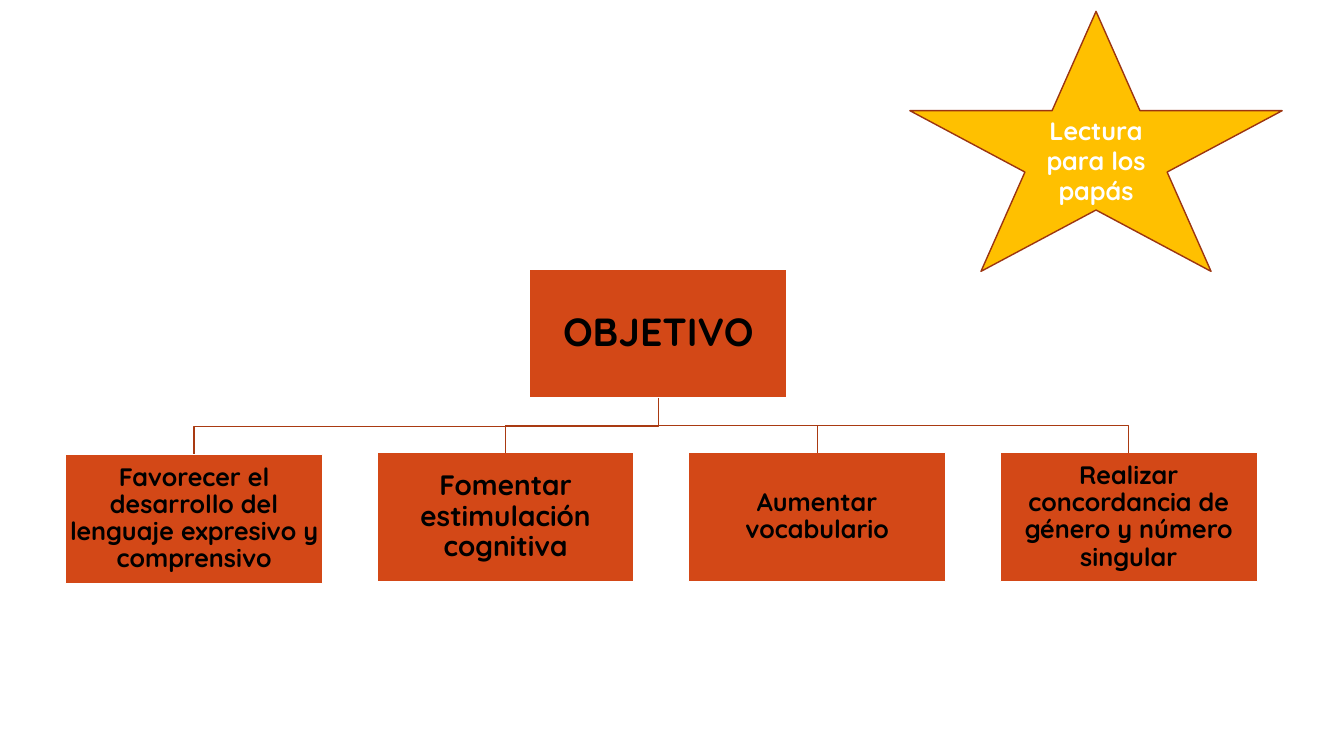
from dataclasses import dataclass

from pptx import Presentation
from pptx.dml.color import RGBColor
from pptx.enum.shapes import MSO_SHAPE
from pptx.enum.text import MSO_ANCHOR, MSO_AUTO_SIZE, PP_ALIGN
from pptx.util import Inches, Pt

STAR = MSO_SHAPE.STAR_5_POINT
RECTANGLE = MSO_SHAPE.RECTANGLE
MIDDLE = MSO_ANCHOR.MIDDLE
CENTER = PP_ALIGN.CENTER
NO_AUTOFIT = MSO_AUTO_SIZE.NONE
TITLE_ONLY = 5


@dataclass(frozen=True)
class Theme:
    font: str = "Quicksand"
    box: str = "D34817"
    branch: str = "A93A12"
    star: str = "FFC000"
    star_edge: str = "9C3511"
    light: str = "FFFFFF"
    dark: str = "000000"
    heading: int = 28
    large: int = 20
    body: int = 18
    line_width: int = 1


def color(value):
    return RGBColor.from_string(value)


def write(shape, text, *, font, size, ink, inset=None, spacing=1.0):
    frame = shape.text_frame
    frame.word_wrap = True
    frame.auto_size = NO_AUTOFIT
    frame.vertical_anchor = MIDDLE
    if inset is not None:
        frame.margin_left = frame.margin_right = Inches(inset)
        frame.margin_top = frame.margin_bottom = Inches(inset)
    para = frame.paragraphs[0]
    para.alignment = CENTER
    para.line_spacing = spacing
    span = para.add_run()
    span.text = text
    span.font.name = font
    span.font.size = Pt(size)
    span.font.bold = True
    span.font.color.rgb = color(ink)


class ObjectiveSlide:
    """Tree chart on a grid of columns and rows, in inches."""

    LEFT, TOP = 0.65, 2.67
    COLUMN, ROW = 3.09, 1.82
    WIDTH, HEIGHT = 2.55, 1.28

    def __init__(self, deck, theme):
        self.theme = theme
        self.deck = deck
        self.page = deck.slides.add_slide(deck.slide_layouts[TITLE_ONLY])

    def cell(self, column, row):
        """Return left, top, width and height of a grid box."""
        return (
            Inches(self.LEFT + column * self.COLUMN),
            Inches(self.TOP + row * self.ROW),
            Inches(self.WIDTH),
            Inches(self.HEIGHT),
        )

    def paint(self, shape, fill, edge):
        shape.fill.solid()
        shape.fill.fore_color.rgb = color(fill)
        shape.line.color.rgb = color(edge)
        shape.line.width = Pt(self.theme.line_width)

    def root(self, text, column, row):
        """Place the title placeholder as the top box of the tree."""
        title = self.page.shapes.title
        title.left, title.top, title.width, title.height = self.cell(column, row)
        self.paint(title, self.theme.box, self.theme.light)
        write(title, text, font=self.theme.font, size=self.theme.heading,
              ink=self.theme.dark, inset=0.02, spacing=0.9)
        return title

    def leaf(self, text, column, row, size):
        box = self.page.shapes.add_shape(RECTANGLE, *self.cell(column, row))
        box.shadow.inherit = False
        self.paint(box, self.theme.box, self.theme.light)
        write(box, text, font=self.theme.font, size=size,
              ink=self.theme.dark, inset=0.01, spacing=0.9)
        return box

    def branch(self, parent, child):
        """Draw an elbow from the parent's bottom to the child's top."""
        start_x = parent.left + parent.width // 2
        start_y = parent.top + parent.height
        end_x = child.left + child.width // 2
        bend_y = (start_y + child.top) // 2
        builder = self.page.shapes.build_freeform(start_x, start_y)
        builder.add_line_segments(
            [(start_x, bend_y), (end_x, bend_y), (end_x, child.top)],
            close=False,
        )
        elbow = builder.convert_to_shape()
        elbow.shadow.inherit = False
        elbow.fill.background()
        elbow.line.color.rgb = color(self.theme.branch)
        elbow.line.width = Pt(self.theme.line_width)

    def star(self, text, left, top, width, height):
        """Place a star, given as shares of the slide's size."""
        wide, high = self.deck.slide_width, self.deck.slide_height
        star = self.page.shapes.add_shape(
            STAR, int(left * wide), int(top * high),
            int(width * wide), int(height * high),
        )
        star.shadow.inherit = False
        self.paint(star, self.theme.star, self.theme.star_edge)
        write(star, text, font=self.theme.font, size=self.theme.body,
              ink=self.theme.light)


def main():
    deck = Presentation()
    deck.slide_width, deck.slide_height = Inches(13.33), Inches(7.5)
    theme = Theme()
    slide = ObjectiveSlide(deck, theme)
    slide.star("Lectura para los papás", 0.677, 0.015, 0.277, 0.344)
    objective = slide.root("OBJETIVO", 1.49, 0)
    goals = [
        ("Favorecer el desarrollo del lenguaje expresivo y comprensivo", 1.01, theme.body),
        ("Fomentar estimulación cognitiva", 1, theme.large),
        ("Aumentar vocabulario", 1, theme.body),
        ("Realizar concordancia de género y número singular", 1, theme.body),
    ]
    for column, (text, row, size) in enumerate(goals):
        slide.branch(objective, slide.leaf(text, column, row, size))
    deck.save("out.pptx")


if __name__ == "__main__":
    main()
